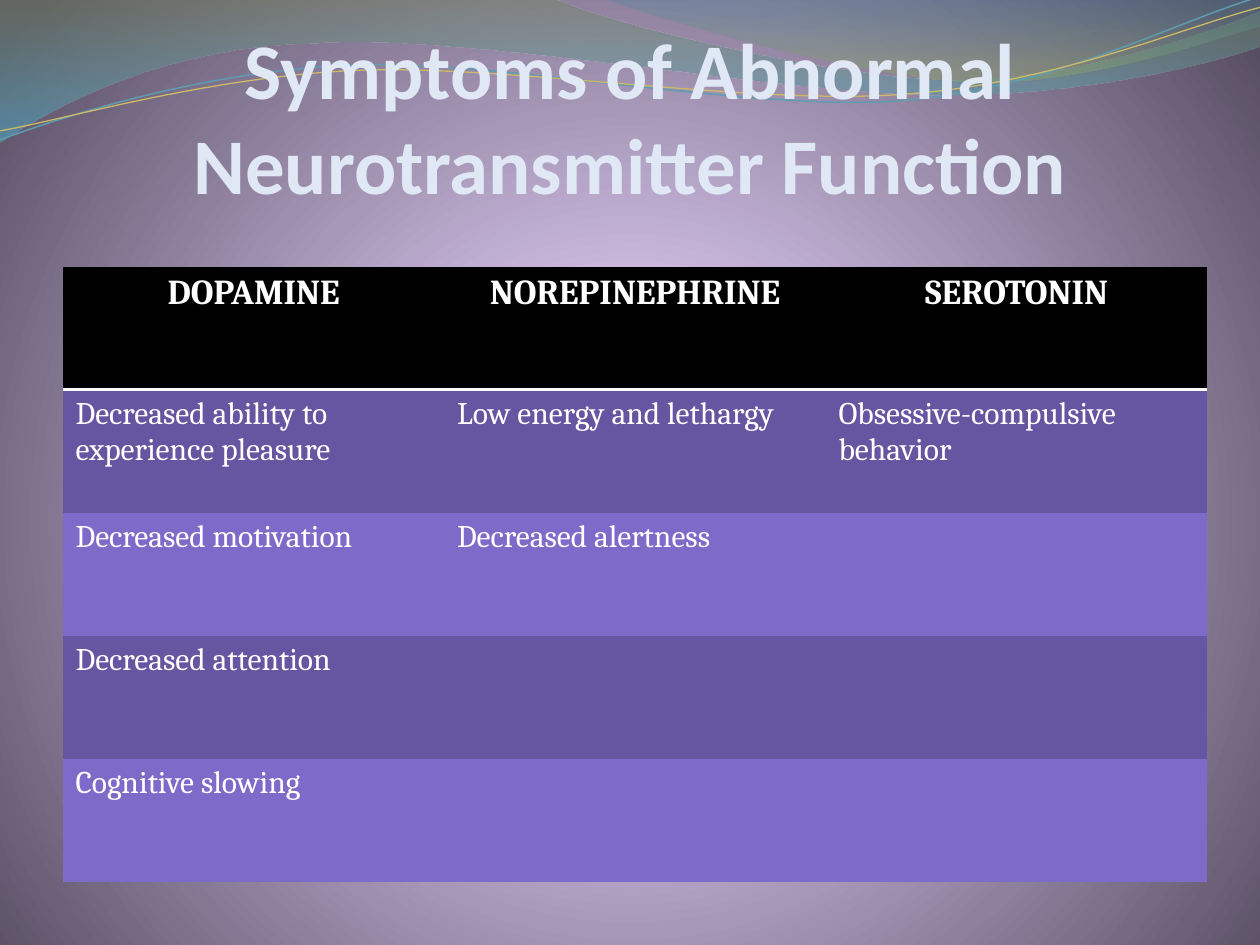
"""Build the slide on symptoms of abnormal neurotransmitter function."""
from lxml.etree import SubElement
from pptx import Presentation
from pptx.dml.color import RGBColor
from pptx.enum.text import MSO_ANCHOR as Anchor, PP_ALIGN as Align
from pptx.oxml import parse_xml
from pptx.oxml.ns import nsdecls, qn
from pptx.util import Cm, Pt

TITLE_BLUE = RGBColor(0xE0, 0xE7, 0xF5)
WHITE = RGBColor(0xFF, 0xFF, 0xFF)
BLACK = RGBColor(0x00, 0x00, 0x00)
DARK_BAND = RGBColor(0x65, 0x56, 0xA1)
LIGHT_BAND = RGBColor(0x7E, 0x6B, 0xC9)
WAVE_OLIVE = RGBColor(0x74, 0x85, 0x5E)
WAVE_BLUE = RGBColor(0x4A, 0xAC, 0xCE)
CREST_TEAL = RGBColor(0x45, 0x88, 0x9F)
CREST_GREEN = RGBColor(0x8A, 0xA3, 0x6D)
STRAND_BLUE = RGBColor(0x5E, 0x9C, 0xB1)
STRAND_GOLD = RGBColor(0xCE, 0xB9, 0x66)
GLOW = RGBColor(0xD4, 0xBF, 0xEC)
GLOW_MIDDLE = RGBColor(0xD3, 0xC1, 0xE7)
GLOW_EDGE = RGBColor(0x58, 0x4E, 0x63)

DOWNWARD = '<a:lin ang="5400000" scaled="1"/>'
RADIAL = ('<a:path path="circle"><a:fillToRect l="10000" t="110000" '
          'r="10000" b="100000"/></a:path>')


def apply_gradient(owner, element, stops, direction):
    owner.fill.solid()
    solid = element.xpath(".//a:solidFill")[0]
    stop_xml = ""
    for position, color, opacity in stops:
        alpha = f'<a:alpha val="{opacity * 1000}"/>' if opacity < 100 else ""
        stop_xml += (f'<a:gs pos="{position * 1000}">'
                     f'<a:srgbClr val="{color}">{alpha}</a:srgbClr></a:gs>')
    solid.getparent().replace(solid, parse_xml(
        f'<a:gradFill {nsdecls("a")} rotWithShape="1">'
        f'<a:gsLst>{stop_xml}</a:gsLst>{direction}</a:gradFill>'))


def draw_outline(shapes, start, segments, close):
    points = [(Cm(x), Cm(y)) for segment in segments
              for x, y in zip(segment[::2], segment[1::2])]
    builder = shapes.build_freeform(Cm(start[0]), Cm(start[1]))
    builder.add_line_segments(points, close=close)
    outline = builder.convert_to_shape()
    outline.shadow.inherit = False
    steps = iter(outline._element.xpath(".//a:lnTo"))
    for segment in segments:
        step = next(steps)
        if len(segment) == 6:
            step.tag = qn("a:cubicBezTo")
            for control in (next(steps), next(steps)):
                SubElement(step, qn("a:pt"), dict(control[0].attrib))
                control.getparent().remove(control)
    return outline


prs = Presentation()
prs.slide_width, prs.slide_height = Cm(25.4), Cm(19.05)
slide = prs.slides.add_slide(prs.slide_layouts[6])
apply_gradient(slide.background, slide._element,
               [(0, GLOW, 100), (25, GLOW_MIDDLE, 100), (100, GLOW_EDGE, 100)], RADIAL)

waves = [
    ((0, 0),
     [(11.18, -0.03),
      (12.09, 0.43, 16.87, 1.6, 19.25, 1.6),
      (21.67, 1.6, 24.33, 0.66, 25.4, 0.23),
      (25.43, 0.91),
      (24.97, 1.12, 22.1, 1.93, 18.95, 1.91),
      (15.8, 1.91, 9.7, 0.71, 6.53, 0.86),
      (3.28, 0.91, 1.17, 2.11, -0.03, 2.87)],
     [(0, WAVE_OLIVE, 45), (100, WAVE_BLUE, 55)]),
    ((12.17, -0.03),
     [(12.93, 0.28, 17.32, 1.57, 19.53, 1.65),
      (21.74, 1.75, 24.41, 0.81, 25.4, 0.53),
      (25.4, 0)],
     [(0, CREST_TEAL, 30), (80, CREST_GREEN, 45)]),
]
for start, segments, stops in waves:
    wave = draw_outline(slide.shapes, start, segments, True)
    wave.line.fill.background()
    apply_gradient(wave, wave._element.spPr, stops, DOWNWARD)
    for line_fill in wave._element.xpath("./p:spPr/a:ln/a:gradFill"):
        line_fill.getparent().remove(line_fill)

strands = [
    ((-0.05, 2.22),
     [(1.19, 1.83, 4.01, 1.04, 7.06, 1.05),
      (10.06, 1.07, 15.01, 2.36, 18.08, 2.29),
      (21.13, 2.21, 23.88, 0.91, 25.4, 0.55)],
     STRAND_BLUE, 0.85),
    ((-0.05, 2.04),
     [(1.16, 1.9, 4.17, 1.15, 7.2, 1.16),
      (10.25, 1.18, 15.13, 2.25, 18.19, 2.16),
      (21.21, 2.1, 23.93, 1.06, 25.45, 0.75)],
     STRAND_GOLD, 0.75),
]
for start, segments, color, width in strands:
    strand = draw_outline(slide.shapes, start, segments, False)
    strand.rotation = 357.3
    strand.fill.background()
    strand.line.color.rgb = color
    strand.line.width = Pt(width)

title = slide.shapes.add_textbox(Cm(1.27), Cm(1.06), Cm(22.86), Cm(3.17)).text_frame
title_frame = {"word_wrap": True, "vertical_anchor": Anchor.BOTTOM, "margin_left": 0,
               "margin_top": Cm(0.13), "margin_right": 0, "margin_bottom": 0}
for name, value in title_frame.items():
    setattr(title, name, value)
title.text = "Symptoms of Abnormal Neurotransmitter Function"
title.paragraphs[0].alignment = Align.CENTER
title_font = title.paragraphs[0].runs[0].font
for name, value in {"name": "Calibri", "size": Pt(45), "bold": True}.items():
    setattr(title_font, name, value)
title_font.color.rgb = TITLE_BLUE

symptoms = [
    ("DOPAMINE", "NOREPINEPHRINE", "SEROTONIN"),
    ("Decreased ability to experience pleasure", "Low energy and lethargy",
     "Obsessive-compulsive behavior"),
    ("Decreased motivation", "Decreased alertness", ""),
    ("Decreased attention", "", ""),
    ("Cognitive slowing", "", ""),
]
header_format = {"name": "Cambria", "size": Pt(20), "bold": True}
body_format = {"name": "Cambria", "size": Pt(18), "bold": False}
frame = slide.shapes.add_table(len(symptoms), len(symptoms[0]),
                               Cm(1.27), Cm(5.38), Cm(23.07), Cm(12.4))
table = frame.table
table.first_row = table.horz_banding = False
frame._element.xpath(".//a:tableStyleId")[0].text = "{2D5ABB26-0587-4C30-8999-92F81FD0307C}"

for row, entries in enumerate(symptoms):
    is_header = row == 0
    band = BLACK if is_header else (LIGHT_BAND, DARK_BAND)[row % 2]
    for column, entry in enumerate(entries):
        cell = table.cell(row, column)
        cell.fill.solid()
        cell.fill.fore_color.rgb = band
        cell.text = entry
        paragraph = cell.text_frame.paragraphs[0]
        paragraph.alignment = Align.CENTER if is_header else Align.LEFT
        for run in paragraph.runs:
            for name, value in (header_format if is_header else body_format).items():
                setattr(run.font, name, value)
            run.font.color.rgb = WHITE
        if is_header:
            cell._tc.get_or_add_tcPr().insert(0, parse_xml(
                f'<a:lnB {nsdecls("a")} w="{Pt(2)}"><a:solidFill>'
                f'<a:srgbClr val="{WHITE}"/></a:solidFill></a:lnB>'))

prs.save("out.pptx")
